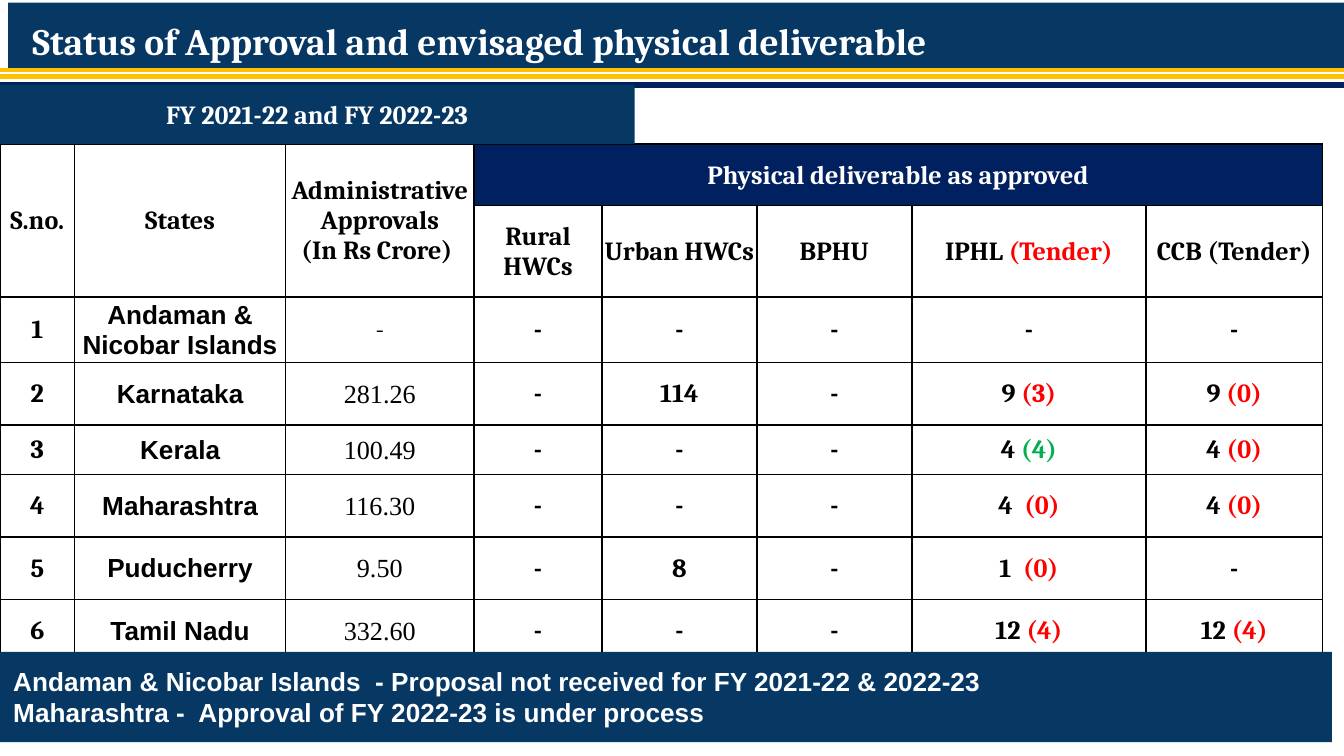
from lxml import etree
from pptx import Presentation
from pptx import util as u
from pptx.dml.color import RGBColor
from pptx.enum import shapes, text
from pptx.oxml import parse_xml
from pptx.oxml.ns import nsdecls, qn

Pt = u.Pt
MID = text.MSO_ANCHOR.MIDDLE
MID_X = text.PP_ALIGN.CENTER
BLUE, NAVY, GOLD = "073763", "002060", "FFC000"
WHITE, BLACK, RED, GREEN = "FFFFFF", "000000", "FF0000", "00B050"


def paint(item, tone):
    if hasattr(item, "solid"):
        item.solid()
        item.fore_color.rgb = RGBColor.from_string(tone)
    else:
        item.color.rgb = RGBColor.from_string(tone)


def style(par, face, tone, size=14, bold=True):
    par.font.name, par.font.size, par.font.bold = face, Pt(size), bold
    paint(par.font, tone)


deck = Presentation()
deck.slide_width, deck.slide_height = Pt(720), Pt(405)
slide = deck.slides.add_slide(deck.slide_layouts[5])

title = slide.shapes.title
title.left, title.top, title.width, title.height = Pt(4.3), Pt(1.4), Pt(715.7), Pt(36.7)
paint(title.fill, BLUE)
frame = title.text_frame
frame.text = "Status of Approval and envisaged physical deliverable"
frame.auto_size = text.MSO_AUTO_SIZE.NONE
frame.word_wrap = True
frame.vertical_anchor = MID
frame.margin_left, frame.margin_right = Pt(13), Pt(5)
frame.margin_top = frame.margin_bottom = Pt(2.7)
par = frame.paragraphs[0]
par.alignment = text.PP_ALIGN.JUSTIFY
par.line_spacing = 1.15
style(par, "Cambria", WHITE, 20)

for y, tone, wide in [(41, GOLD, 3), (45.4, NAVY, 3), (37.4, GOLD, 2.25)]:
    rule = slide.shapes.add_connector(shapes.MSO_CONNECTOR.STRAIGHT, 0, Pt(y), Pt(720), Pt(y))
    paint(rule.line, tone)
    rule.line.width = Pt(wide)
    etree.SubElement(rule.element.spPr, qn("a:effectLst"))

rows = [
    ["S.no.", "States", "Administrative Approvals\v(In Rs Crore) ",
     "Physical deliverable as approved", "", "", "", ""],
    ["", "", "", "Rural HWCs", "Urban HWCs", "BPHU", "IPHL |(Tender)", "CCB (Tender)"],
    ["1", "Andaman & Nicobar Islands", "-", "-", "-", "-", "-", "-"],
    ["2", "Karnataka", "281.26", "-", "114", "-", "9 |(3)", "9 |(0)"],
    ["3", "Kerala", "100.49", "-", "-", "-", "4 |(4)", "4 |(0)"],
    ["4", "Maharashtra", "116.30", "-", "-", "-", "4  |(0)", "4 |(0)"],
    ["5", "Puducherry", "9.50", "-", "8", "-", "1  |(0)", "-"],
    ["6", "Tamil Nadu", "332.60", "-", "-", "-", "12 |(4)", "12 |(4)"],
]
wides = [40, 113, 101, 68.5, 83, 83, 125.5, 94.5]
highs = [33, 44, 35, 33.5, 26.5, 33.5, 33.5, 33.5]
table = slide.shapes.add_table(len(rows), len(wides), 0, Pt(77.2),
                               Pt(sum(wides)), Pt(sum(highs))).table
table.first_row = table.horz_banding = False
for col, wide in zip(table.columns, wides):
    col.width = Pt(wide)
for row, high in zip(table.rows, highs):
    row.height = Pt(high)

for r, row in enumerate(rows):
    for c, words in enumerate(row):
        cell = table.cell(r, c)
        banner = r == 0 and c > 2
        paint(cell.fill, NAVY if banner else WHITE)
        cell.vertical_anchor = MID
        cell.margin_left = cell.margin_right = cell.margin_top = Pt(0.7)
        cell.margin_bottom = 0
        props = cell._tc.get_or_add_tcPr()
        for i, side in enumerate("LRTB"):
            props.insert(i, parse_xml(
                f'<a:ln{side} w="12700" {nsdecls("a")}><a:solidFill>'
                f'<a:srgbClr val="{BLACK}"/></a:solidFill></a:ln{side}>'))
        par = cell.text_frame.paragraphs[0]
        par.alignment = MID_X
        face = "Cambria"
        if r > 1 and c == 1:
            face = "Arial"
        elif r > 2 and c == 2:
            face = "Times New Roman"
        style(par, face, WHITE if banner else BLACK, bold=r < 2 or c != 2)
        head, _, tail = words.partition("|")
        par.text = head
        if tail:
            run = par.add_run()
            run.text = tail
            paint(run.font, GREEN if head.strip() == tail.strip("()") else RED)

for c in range(3):
    table.cell(0, c).merge(table.cell(1, c))
table.cell(0, 3).merge(table.cell(0, 7))

bars = [
    (45.4, 340, 31.8, "Cambria", MID_X, "FY 2021-22 and FY 2022-23"),
    (349.2, 713.5, 48.4, "Arial", text.PP_ALIGN.LEFT,
     "Andaman & Nicobar Islands  - Proposal not received for FY 2021-22 & 2022-23\n"
     "Maharashtra -  Approval of FY 2022-23 is under process"),
]
for y, wide, high, face, align, words in bars:
    bar = slide.shapes.add_shape(shapes.MSO_SHAPE.RECTANGLE, 0, Pt(y), Pt(wide), Pt(high))
    bar.shadow.inherit = False
    paint(bar.fill, BLUE)
    bar.line.fill.background()
    frame = bar.text_frame
    frame.word_wrap = True
    frame.auto_size = text.MSO_AUTO_SIZE.SHAPE_TO_FIT_TEXT
    frame.vertical_anchor = text.MSO_ANCHOR.TOP
    frame.margin_left = frame.margin_right = frame.margin_top = frame.margin_bottom = Pt(7.2)
    frame.text = words
    for par in frame.paragraphs:
        par.alignment = align
        style(par, face, WHITE)

deck.save("out.pptx")
